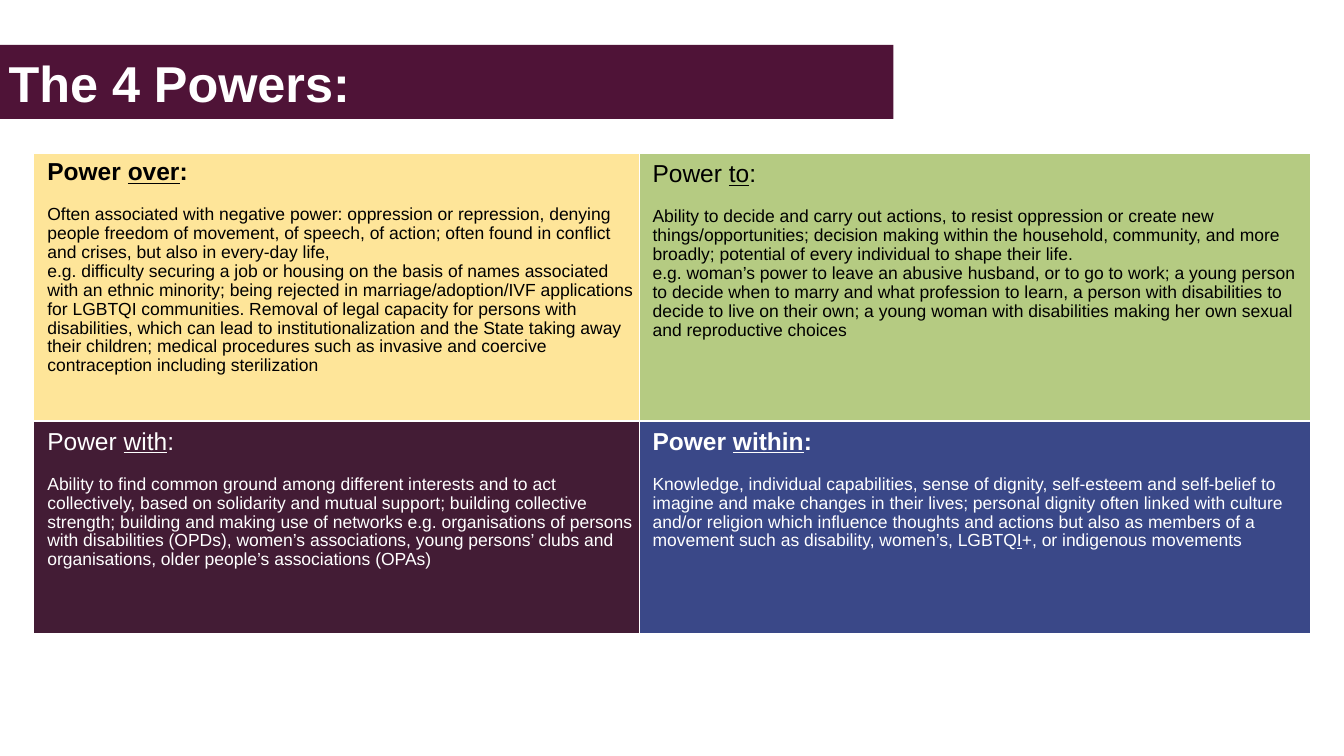
from pptx import Presentation
from pptx.dml.color import RGBColor
from pptx.enum.shapes import MSO_SHAPE
from pptx.enum.text import MSO_ANCHOR, PP_ALIGN
from pptx.oxml import parse_xml
from pptx.oxml.ns import nsdecls
from pptx.util import Inches, Pt

COLORS = {
    "white": "FFFFFF", "black": "000000", "banner": "4F1337",
    "over": "FEE599", "to": "B5CB82", "with": "431C35", "within": "3A4888",
}
FONT = "Arial"
COLUMN_WIDTHS = (12.01, 13.32)
ROW_HEIGHTS = (5.31, 4.22)

# Each power: name, heading is bold, text colour, top margin, body paragraphs
# A body paragraph is a list of (text, underlined) runs
POWERS = [
    [
        ("over", True, "black", 0.12, [
            [("Often associated with negative power: oppression or repression, denying people "
              "freedom of movement, of speech, of action; often found in conflict and crises, "
              "but also in every-day life,", False)],
            [("e.g. difficulty securing a job or housing on the basis of names associated with "
              "an ethnic minority; being rejected in marriage/adoption/IVF applications for "
              "LGBTQI communities. Removal of legal capacity for persons with disabilities, "
              "which can lead to institutionalization and the State taking away their children; "
              "medical procedures such as invasive and coercive contraception including "
              "sterilization", False)],
        ]),
        ("to", False, "black", 0.16, [
            [("Ability to decide and carry out actions, to resist oppression or create new "
              "things/opportunities; decision making within the household, community, and more "
              "broadly; potential of every individual to shape their life.", False)],
            [("e.g. woman’s power to leave an abusive husband, or to go to work; a young person "
              "to decide when to marry and what profession to learn, a person with disabilities "
              "to decide to live on their own; a young woman with disabilities making her own "
              "sexual and reproductive choices", False)],
        ]),
    ],
    [
        ("with", False, "white", 0.16, [
            [("Ability to find common ground among different interests and to act collectively, "
              "based on solidarity and mutual support; building collective strength; building "
              "and making use of networks e.g. organisations of persons with disabilities "
              "(OPDs), women’s associations, young persons’ clubs and organisations, older "
              "people’s associations (OPAs)", False)],
        ]),
        ("within", True, "white", 0.16, [
            [("Knowledge, individual capabilities, sense of dignity, self-esteem and self-belief "
              "to imagine and make changes in their lives; personal dignity often linked with "
              "culture and/or religion which influence thoughts and actions but also as members "
              "of a movement such as disability, women’s, LGBTQ", False),
             ("I", True), ("+, or indigenous movements", False)],
        ]),
    ],
]


def rgb(name):
    return RGBColor.from_string(COLORS[name])


def write(p, runs, size, color, bold=False, indent=0, after=0, spacing=None):
    """Fill a paragraph with (text, underlined) runs in one format."""
    p.alignment = PP_ALIGN.LEFT
    p.space_before, p.space_after = Pt(0), Pt(after)
    if spacing:
        p.line_spacing = spacing
    if indent:
        pPr = p._p.get_or_add_pPr()
        pPr.set("marL", str(Inches(indent)))
        pPr.set("indent", "0")
    for text, underlined in runs:
        r = p.add_run()
        r.text = text
        font = r.font
        font.name, font.size, font.bold = FONT, Pt(size), bold
        font.underline = underlined
        font.color.rgb = rgb(color)


def set_borders(cell, widths):
    """Draw white borders; widths maps a side (L, R, T, B) to points."""
    tcPr = cell._tc.get_or_add_tcPr()
    for i, side in enumerate("LRTB"):
        tcPr.insert(i, parse_xml(
            f'<a:ln{side} {nsdecls("a")} w="{Pt(widths[side])}"><a:solidFill>'
            f'<a:srgbClr val="{COLORS["white"]}"/></a:solidFill></a:ln{side}>'))


def add_banner(slide, left, top, width, height):
    sp = slide.shapes.add_shape(MSO_SHAPE.RECTANGLE, Inches(left), Inches(top),
                                Inches(width), Inches(height))
    sp.shadow.inherit = False
    sp.fill.solid()
    sp.fill.fore_color.rgb = rgb("banner")
    sp.line.fill.background()
    tf = sp.text_frame
    tf.word_wrap = True
    tf.vertical_anchor = MSO_ANCHOR.MIDDLE
    tf.margin_left = Inches(0.17)
    tf.margin_top = tf.margin_right = tf.margin_bottom = Inches(0.06)
    write(tf.paragraphs[0], [("The 4 Powers:", False)], 72, "white", bold=True)


def fill_power(cell, name, bold, color, margin_top, body):
    cell.fill.solid()
    cell.fill.fore_color.rgb = rgb(name)
    cell.vertical_anchor = MSO_ANCHOR.TOP
    cell.margin_left = cell.margin_right = Inches(0.07)
    cell.margin_top, cell.margin_bottom = Inches(margin_top), 0
    tf = cell.text_frame
    heading = [("Power ", False), (name, True), (":", False)]
    write(tf.paragraphs[0], heading, 35, color, bold=bold, indent=0.2, after=28, spacing=0.97)
    for runs in body:
        write(tf.add_paragraph(), runs, 25, color, indent=0.2, spacing=0.97)


def add_powers_table(slide, left, top):
    frame = slide.shapes.add_table(len(ROW_HEIGHTS), len(COLUMN_WIDTHS), Inches(left), Inches(top),
                                   Inches(sum(COLUMN_WIDTHS)), Inches(sum(ROW_HEIGHTS)))
    table = frame.table
    table.first_row = table.horz_banding = False
    for column, width in zip(table.columns, COLUMN_WIDTHS):
        column.width = Inches(width)
    for row, height in zip(table.rows, ROW_HEIGHTS):
        row.height = Inches(height)
    for i, powers in enumerate(POWERS):
        for j, power in enumerate(powers):
            cell = table.cell(i, j)
            fill_power(cell, *power)
            # The rule between the two rows is heavier
            set_borders(cell, {"L": 1, "R": 1, "T": 3 if i else 1, "B": 1 if i else 3})


def main():
    prs = Presentation()
    prs.slide_width, prs.slide_height = Inches(26.67), Inches(15)
    slide = prs.slides.add_slide(prs.slide_layouts[6])
    add_powers_table(slide, 0.67, 3.04)
    add_banner(slide, 0, 0.89, 17.73, 1.47)
    prs.save("out.pptx")


if __name__ == "__main__":
    main()
